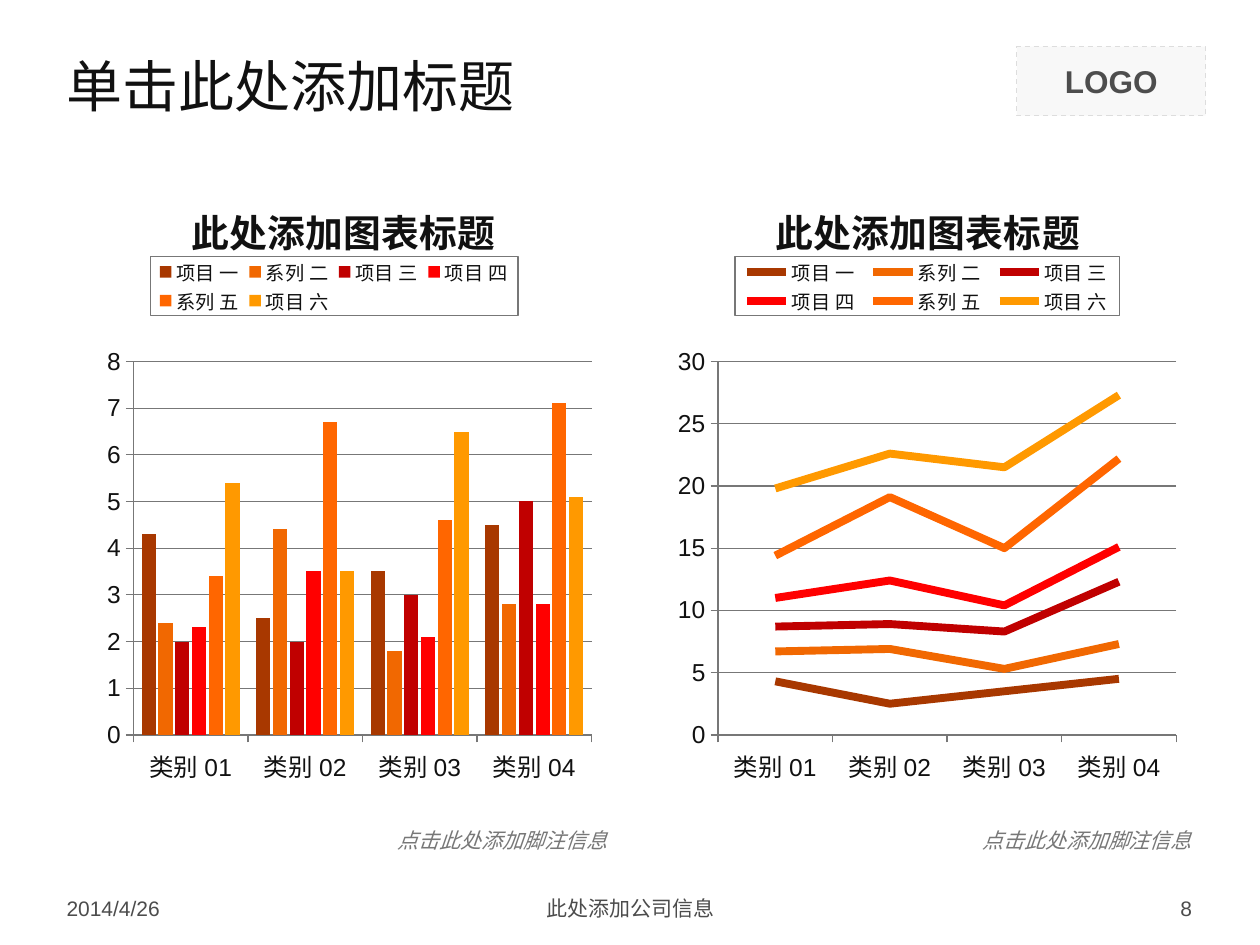
from pptx import Presentation
from pptx.chart.data import CategoryChartData
from pptx.dml.color import RGBColor
from pptx.enum.chart import XL_CHART_TYPE as Kind, XL_LEGEND_POSITION as Spot
from pptx.enum.chart import XL_MARKER_STYLE as Mark, XL_TICK_MARK as Tick
from pptx.enum.dml import MSO_LINE
from pptx.enum.shapes import MSO_SHAPE
from pptx.enum.text import MSO_ANCHOR, PP_ALIGN
from pptx.oxml import parse_xml
from pptx.oxml.ns import nsdecls, qn
from pptx.util import Inches, Pt

hue = RGBColor.from_string
deck = Presentation()
deck.slide_width, deck.slide_height = Inches(10), Inches(7.5)
slide = deck.slides.add_slide(deck.slide_layouts[6])


def area(*box):
    """Turn left, top, width, height in percent of the slide into lengths."""
    sides = (deck.slide_width, deck.slide_height) * 2
    return [int(side * part / 100) for side, part in zip(sides, box)]


def place(node, index, inner, *box):
    """Fix a chart part at shares of the chart; a width is optional."""
    for old in node.findall(qn("c:layout")):
        node.remove(old)
    modes = "".join(f'<c:{a}Mode val="edge"/>' for a in "xy")
    sizes = "".join(f'<c:{a} val="{v}"/>' for a, v in zip("xywh", box))
    goal = '<c:layoutTarget val="inner"/>' if inner else ""
    node.insert(index, parse_xml(
        f'<c:layout {nsdecls("c")}><c:manualLayout>{goal}{modes}{sizes}'
        "</c:manualLayout></c:layout>"))


# Shared grid: two columns between equal margins
edge, wide, right = 4.3, 44.9, 50.7
foot = 94.13

# Logo box
logo = slide.shapes.add_shape(MSO_SHAPE.RECTANGLE, *area(80.7, 4.93, 15, 7.33))
logo.shadow.inherit = False
logo.fill.solid()
logo.fill.fore_color.rgb = hue("F8F8F8")
logo.line.color.rgb = hue("DDDDDD")
logo.line.width = Pt(0.75)
logo.line.dash_style = MSO_LINE.DASH

# Texts: box, words, alignment, colour, wrap, font values
left, mid, end = PP_ALIGN.LEFT, PP_ALIGN.CENTER, PP_ALIGN.RIGHT
small = {"size": Pt(12), "name": "Arial"}
note = {**small, "italic": True}
big = {"size": Pt(32), "name": "Montserrat"}
bold = {"size": Pt(18), "name": "Arial", "bold": True}
texts = [
    (None, "LOGO", mid, "4D4D4D", True, bold),
    ((edge, 3.73, 91.4, 10.53), "单击此处添加标题", left, "111111", True, big),
    ((edge, foot, 23.3, 3.87), "2014/4/26", left, "4C4C4C", True, small),
    ((34.2, foot, 31.7, 3.87), "此处添加公司信息", mid, "4C4C4C", True, small),
    ((72.3, foot, 23.3, 3.87), "8", end, "4C4C4C", True, small),
]
for start in (edge, right):
    box = (start + wide - 18.8, 86.93, 18.8, 4)
    texts.append((box, "点击此处添加脚注信息", end, "777777", False, note))

for box, words, align, tint, wrap, style in texts:
    shape = slide.shapes.add_textbox(*area(*box)) if box else logo
    frame = shape.text_frame
    frame.word_wrap = wrap
    frame.vertical_anchor = MSO_ANCHOR.MIDDLE if wrap else MSO_ANCHOR.TOP
    para = frame.paragraphs[0]
    para.alignment = align
    run = para.add_run()
    run.text = words
    run.font.color.rgb = hue(tint)
    for key, value in style.items():
        setattr(run.font, key, value)

# Chart data, the same for both charts
rows = [
    ("项目 一", (4.3, 2.5, 3.5, 4.5), "A83800"),
    ("系列 二", (2.4, 4.4, 1.8, 2.8), "F16801"),
    ("项目 三", (2, 2, 3, 5), "C00000"),
    ("项目 四", (2.3, 3.5, 2.1, 2.8), "FF0000"),
    ("系列 五", (3.4, 6.7, 4.6, 7.1), "FF6600"),
    ("项目 六", (5.4, 3.5, 6.5, 5.1), "FF9900"),
]
data = CategoryChartData()
data.categories = [f"类别 0{n}" for n in range(1, 5)]
for name, vals, tint in rows:
    data.add_series(name, vals)

# Charts: left edge, kind, top of scale, step, legend width
charts = [
    (edge, Kind.COLUMN_CLUSTERED, 8, 1, 0.65),
    (right, Kind.LINE_STACKED, 30, 5, 0.68),
]
for start, kind, top, step, span in charts:
    box = area(start, 17.47, wide, 69.33)
    chart = slide.shapes.add_chart(kind, *box, data).chart
    chart.font.size, chart.font.name = Pt(18), "Arial"
    chart.font.color.rgb = hue("111111")

    # Title
    chart.has_title = True
    head = chart.chart_title.text_frame
    head.text = "此处添加图表标题"
    font = head.paragraphs[0].runs[0].font
    font.size, font.bold, font.name = Pt(21.6), True, "Arial"
    font.color.rgb = hue("111111")
    place(chart.chart_title._element, 1, False, 0.23, 0.04)

    # Legend with a thin frame
    chart.has_legend = True
    key = chart.legend
    key.position, key.include_in_layout = Spot.TOP, False
    key.font.size = Pt(11)
    key.font.color.rgb = hue("111111")
    place(key._element, 1, False, 0.17, 0.14, span, 0.09)
    key._element.find(qn("c:overlay")).addnext(parse_xml(
        f'<c:spPr {nsdecls("c", "a")}><a:noFill/><a:ln w="9525"><a:solidFill>'
        '<a:srgbClr val="777777"/></a:solidFill></a:ln></c:spPr>'))

    # Axes and grid
    scale = chart.value_axis
    scale.minimum_scale, scale.maximum_scale, scale.major_unit = 0, top, step
    scale.has_major_gridlines = True
    for axis in (chart.category_axis, scale):
        axis.major_tick_mark, axis.minor_tick_mark = Tick.OUTSIDE, Tick.NONE
        axis.tick_labels.font.size = Pt(14)
        axis.tick_labels.font.color.rgb = hue("111111")
    for item in (chart.category_axis, scale, scale.major_gridlines):
        item.format.line.width = Pt(0.75)
        item.format.line.color.rgb = hue("777777")

    # Series
    plot = chart.plots[0]
    plot.vary_by_categories = False
    place(chart._chartSpace.chart.plotArea, 0, True, 0.14, 0.3, 0.81, 0.57)
    bars = kind == Kind.COLUMN_CLUSTERED
    if bars:
        plot.gap_width, plot.overlap = 117, -18
    for row, (name, vals, tint) in zip(plot.series, rows):
        if bars:
            row.format.fill.solid()
            row.format.fill.fore_color.rgb = hue(tint)
        else:
            row.smooth = False
            row.marker.style = Mark.NONE
            row.format.line.width = Pt(4.5)
            row.format.line.color.rgb = hue(tint)

deck.save("out.pptx")
